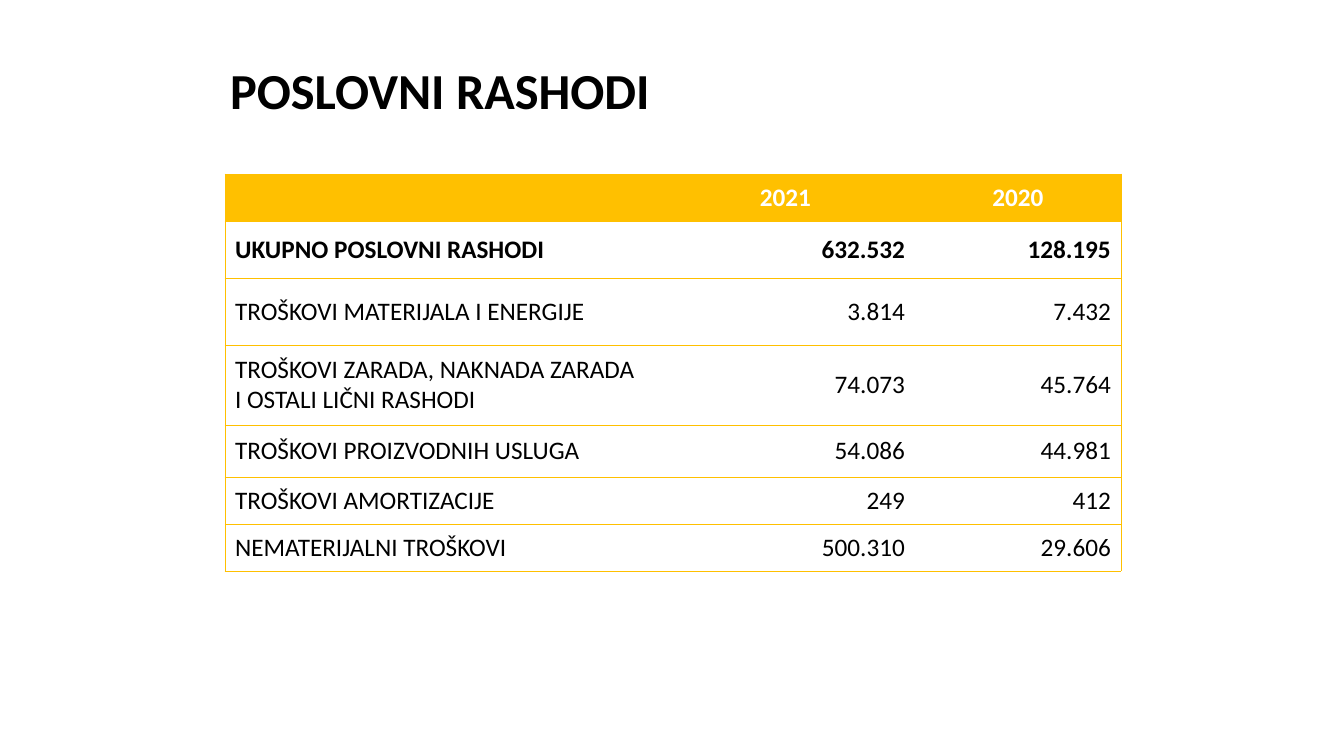
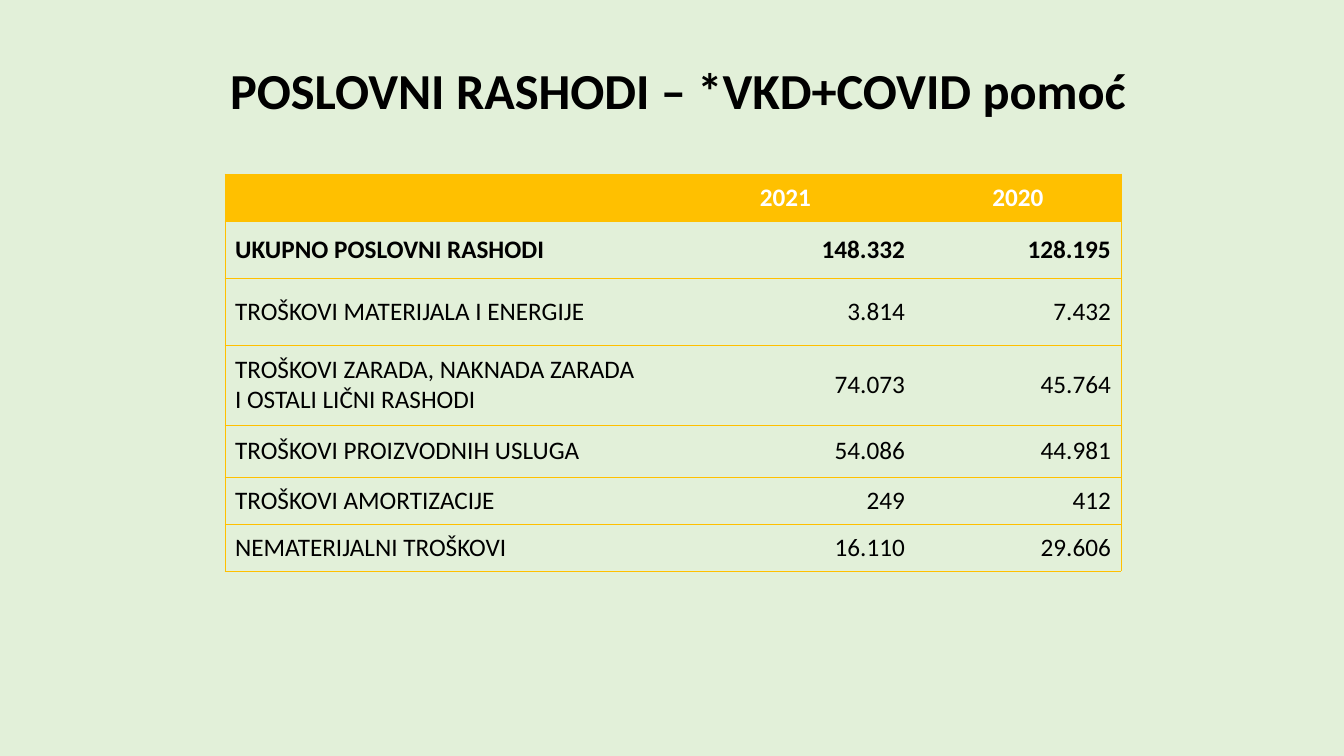
from lxml import etree
from pptx import Presentation
from pptx.dml.color import RGBColor
from pptx.enum.text import MSO_ANCHOR, MSO_AUTO_SIZE, PP_ALIGN
from pptx.oxml.ns import qn
from pptx.util import Pt

LEFT, MID, RIGHT = PP_ALIGN.LEFT, PP_ALIGN.CENTER, PP_ALIGN.RIGHT
MIDDLE = MSO_ANCHOR.MIDDLE
NO_FIT = MSO_AUTO_SIZE.NONE

BLACK = RGBColor(0x00, 0x00, 0x00)
WHITE = RGBColor(0xFF, 0xFF, 0xFF)
GREEN = RGBColor(0xE2, 0xF0, 0xD9)
GOLD = RGBColor(0xFF, 0xC0, 0x00)

PX = 914400 / 100.8
TITLE = {"size": Pt(36), "bold": True, "name": "Calibri"}
HEAD = {"size": Pt(18), "bold": True, "name": "Calibri"}
BODY = {**HEAD, "bold": False}

COLS = [431, 259, 206]
ROWS = [47, 57, 67, 80, 52, 47, 47]
ALIGNS = [LEFT, RIGHT, RIGHT]

SLIDES = [
    ("POSLOVNI RASHODI", WHITE, "632.532", "500.310"),
    ("POSLOVNI RASHODI – *VKD+COVID pomoć", GREEN, "148.332", "16.110"),
]


def style(para, look, color, align):
    para.alignment = align
    for key, value in look.items():
        setattr(para.font, key, value)
    para.font.color.rgb = color


def border(cell, edges):
    props = cell._tc.get_or_add_tcPr()
    for spot, (side, shown) in enumerate(edges.items()):
        line = etree.Element(qn(f"a:ln{side}"), w=str(Pt(0.5)))
        if shown:
            fill = etree.SubElement(line, qn("a:solidFill"))
            etree.SubElement(fill, qn("a:srgbClr"), val=str(GOLD))
        else:
            etree.SubElement(line, qn("a:noFill"))
        props.insert(spot, line)


deck = Presentation()
deck.slide_width, deck.slide_height = round(1344 * PX), round(756 * PX)

for name, back, total, other in SLIDES:
    slide = deck.slides.add_slide(deck.slide_layouts[5])
    slide.background.fill.solid()
    slide.background.fill.fore_color.rgb = back

    title = slide.shapes.title
    title.left, title.top = round(106 * PX), 0
    title.width, title.height = round(1159 * PX), round(186 * PX)
    frame = title.text_frame
    frame.text = name
    frame.auto_size = NO_FIT
    frame.vertical_anchor = MIDDLE
    frame.margin_left = round(124 * PX)
    frame.paragraphs[0].line_spacing = 0.9
    style(frame.paragraphs[0], TITLE, BLACK, LEFT)

    data = [
        ("", "2021", "2020"),
        ("UKUPNO POSLOVNI RASHODI", total, "128.195"),
        ("TROŠKOVI MATERIJALA I ENERGIJE", "3.814", "7.432"),
        ("TROŠKOVI ZARADA, NAKNADA ZARADA I OSTALI LIČNI RASHODI", "74.073", "45.764"),
        ("TROŠKOVI PROIZVODNIH USLUGA", "54.086", "44.981"),
        ("TROŠKOVI AMORTIZACIJE", "249", "412"),
        ("NEMATERIJALNI TROŠKOVI", other, "29.606"),
    ]
    box = [round(n * PX) for n in (225, 174, sum(COLS), sum(ROWS))]
    table = slide.shapes.add_table(len(ROWS), len(COLS), *box).table
    table.horz_banding = False
    for col, width in zip(table.columns, COLS):
        col.width = round(width * PX)
    for r, (row, height) in enumerate(zip(table.rows, ROWS)):
        row.height = round(height * PX)
        for c, cell in enumerate(row.cells):
            cell.text = data[r][c]
            cell.vertical_anchor = MIDDLE
            para = cell.text_frame.paragraphs[0]
            if r == 0:
                cell.fill.solid()
                cell.fill.fore_color.rgb = GOLD
                style(para, HEAD, WHITE, MID)
            else:
                cell.fill.background()
                style(para, HEAD if r == 1 else BODY, BLACK, ALIGNS[c])
            border(cell, {
                "L": c == 0,
                "R": c == len(COLS) - 1,
                "T": True,
                "B": True,
            })

deck.save("out.pptx")
